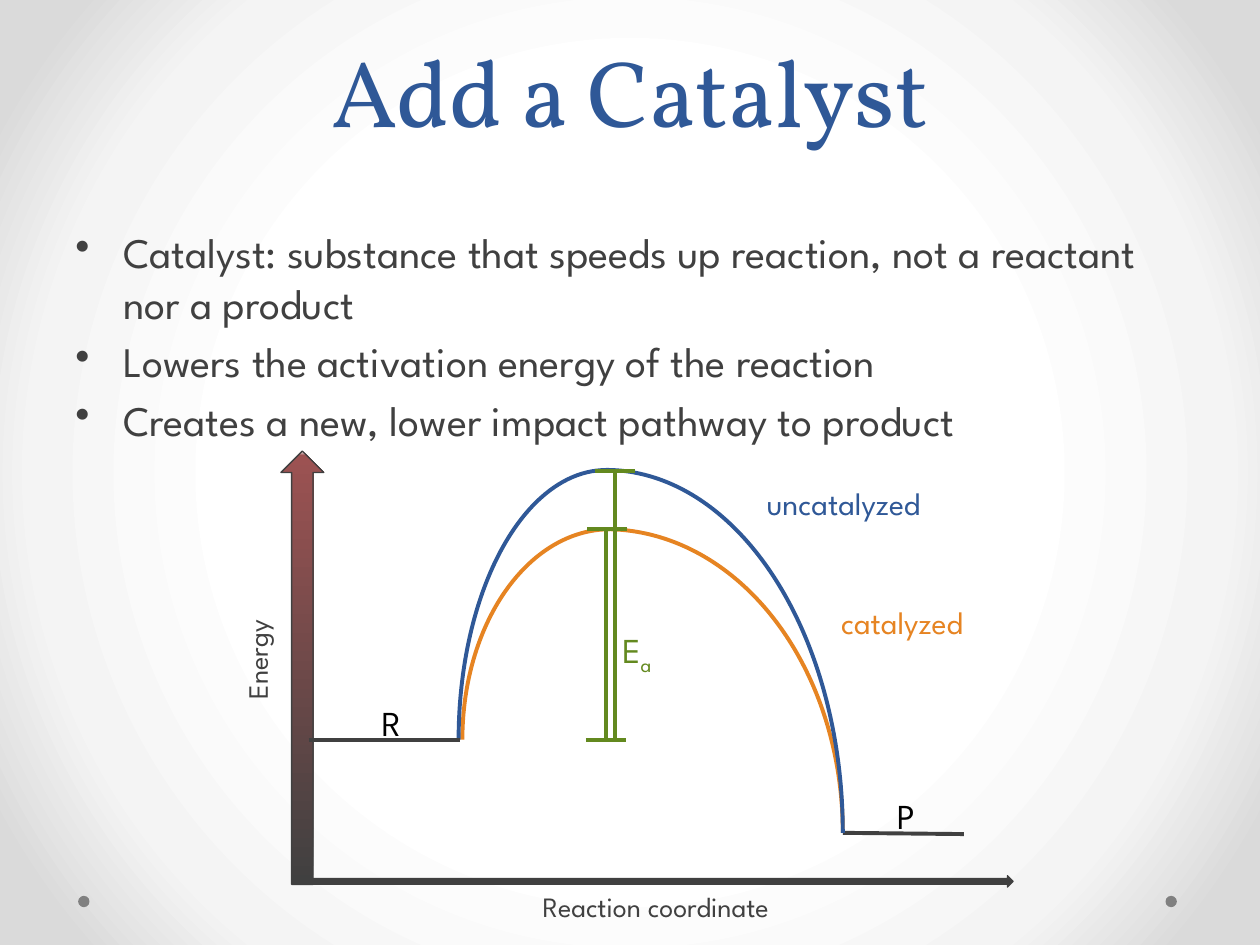
from lxml import etree
from pptx import Presentation
from pptx.dml.color import RGBColor
from pptx.enum.shapes import MSO_CONNECTOR, MSO_SHAPE
from pptx.enum.text import MSO_ANCHOR, PP_ALIGN
from pptx.oxml import parse_xml
from pptx.oxml.ns import qn
from pptx.util import Inches, Pt

ARC, ARROW, OVAL = MSO_SHAPE.ARC, MSO_SHAPE.UP_ARROW, MSO_SHAPE.OVAL
LINE = MSO_CONNECTOR.STRAIGHT
LEFT, CENTER = PP_ALIGN.LEFT, PP_ALIGN.CENTER
TOP, BOTTOM = MSO_ANCHOR.TOP, MSO_ANCHOR.BOTTOM
NS = "http://schemas.openxmlformats.org/drawingml/2006/main"
HEAD, BODY = "Vollkorn", "League Spartan"
BLUE, ORANGE, GREEN = "2F5897", "E68422", "63891F"
DARK, BLACK, GRAY = "404040", "000000", "808080"
WIDE, HIGH = 10, 7.5

TITLE = "Add a Catalyst"
POINTS = [
    "Catalyst: substance that speeds up reaction, not a reactant nor a product",
    "Lowers the activation energy of the reaction",
    "Creates a new, lower impact pathway to product",
]
LABELS = [
    ("R", 2.93, 5.52, 0.38, 0.34, 20, BLACK, LEFT, 0),
    ("P", 7.02, 6.26, 0.38, 0.34, 20, BLACK, LEFT, 0),
    ("Reaction coordinate", 3.92, 7.01, 2.57, 0.29, 16, DARK, CENTER, 0),
    ("Energy", 1.41, 5.05, 1.26, 0.37, 16, DARK, CENTER, 270),
    ("catalyzed", 6.38, 4.74, 1.56, 0.4, 18, ORANGE, CENTER, 0),
    ("uncatalyzed", 5.81, 3.79, 1.77, 0.4, 18, BLUE, CENTER, 0),
]
START, PEAK, END = 2.45, 4.81, 6.69
BASE, FLOOR = 5.87, 6.61
RUN, TICK = 1.17, 0.16
CURVES = [(ORANGE, 3.67, 4.2), (BLUE, 3.64, 3.73)]
LEVELS = [
    (START, BASE, 3.65, BASE, DARK),
    (END, FLOOR, 7.65, 6.62, DARK),
]
GAPS = [(PEAK, 4.2), (4.88, 3.73)]
TICKS = [(PEAK, BASE), (4.82, 4.2), (4.88, 3.74)]

deck = Presentation()
deck.slide_width, deck.slide_height = Inches(WIDE), Inches(HIGH)
slide = deck.slides.add_slide(deck.slide_layouts[6])
shapes = slide.shapes


def color(code):
    return RGBColor.from_string(code)


def fade(fill, owner, stops, tail):
    fill.solid()
    old = next(owner.iter(qn("a:solidFill")))
    rows = "".join(
        f'<a:gs pos="{at * 1000}"><a:srgbClr val="{code}"/></a:gs>'
        for at, code in stops
    )
    new = parse_xml(
        f'<a:gradFill xmlns:a="{NS}" rotWithShape="1">'
        f"<a:gsLst>{rows}</a:gsLst>{tail}</a:gradFill>"
    )
    old.getparent().replace(old, new)


def shape(kind, x, y, w, h, fill=None, edge=None, width=0.75, turn=0):
    item = shapes.add_shape(kind, *map(Inches, (x, y, w, h)))
    item.shadow.inherit = False
    item.rotation = turn
    if fill:
        item.fill.solid()
        item.fill.fore_color.rgb = color(fill)
    else:
        item.fill.background()
    if edge:
        item.line.color.rgb = color(edge)
        item.line.width = Pt(width)
    else:
        item.line.fill.background()
    return item


def line(x1, y1, x2, y2, code):
    item = shapes.add_connector(LINE, *map(Inches, (x1, y1, x2, y2)))
    item.line.color.rgb = color(code)
    item.line.width = Pt(2.25)
    etree.SubElement(item._element.spPr, qn("a:effectLst"))


def text(rows, x, y, w, h, size, code, align=LEFT, turn=0, face=BODY, anchor=TOP):
    box = shapes.add_textbox(*map(Inches, (x, y, w, h)))
    box.rotation = turn
    frame = box.text_frame
    frame.word_wrap = True
    frame.vertical_anchor = anchor
    frame.text = "\n".join(rows)
    for para in frame.paragraphs:
        para.alignment = align
        font = para.font
        font.name, font.size, font.color.rgb = face, Pt(size), color(code)
    return frame.paragraphs


def bullet(para):
    para.space_before = Pt(4.8)
    props = para._p.get_or_add_pPr()
    props.set("marL", str(Inches(0.38)))
    props.set("indent", str(-Inches(0.38)))
    mark = etree.Element(qn("a:buChar"), char="•")
    props.find(qn("a:defRPr")).addprevious(mark)


def rise(code, foot, top):
    half = BASE - top
    shape(ARC, foot + RUN - half, BASE - RUN, 2 * half, 2 * RUN,
          edge=code, width=2.25, turn=270)


def fall(code, foot, top):
    half, drop = END - PEAK, FLOOR - top
    shape(ARC, PEAK - half, top, 2 * half, 2 * drop, edge=code, width=2.25)


back = slide.background
fade(back.fill, slide._element,
     [(50, "FFFFFF"), (76, "F4F4F4"), (92, "DADADA")],
     '<a:path path="circle"><a:fillToRect l="50000" t="50000" '
     'r="50000" b="50000"/></a:path>')

for x in (0.62, 9.25):
    shape(OVAL, x, 7.11, 0.09, 0.09, GRAY)

text([TITLE], 0.5, 0, 9, 1.21, 54, BLUE, CENTER,
     face=HEAD, anchor=BOTTOM)[0].line_spacing = Pt(58)
for para in text(POINTS, 0.5, 1.75, 9, 4.95, 24, DARK):
    bullet(para)

rise_axis = shape(ARROW, 2.23, 3.58, 0.34, 3.44, DARK, DARK)
fade(rise_axis.fill, rise_axis._element.spPr,
     [(0, DARK), (99, "9C5252"), (100, "FFFFFF")],
     '<a:lin ang="16200000" scaled="0"/>')
shape(ARROW, 5.2, 4.2, 0.09, 5.59, DARK, DARK, turn=90)

for curve in CURVES:
    rise(*curve)
for level in LEVELS:
    line(*level)
for curve in CURVES:
    fall(*curve)
for x, top in GAPS:
    line(x, top, x, BASE, GREEN)
for x, y in TICKS:
    line(x - TICK, y, x + TICK, y, GREEN)

for label, x, y, w, h, size, code, align, turn in LABELS:
    text([label], x, y, w, h, size, code, align, turn)
energy = text(["E"], 4.84, 4.94, 0.61, 0.34, 20, GREEN)[0]
low = energy.add_run()
low.text = "a"
low.font._element.set("baseline", "-25000")

deck.save("out.pptx")
